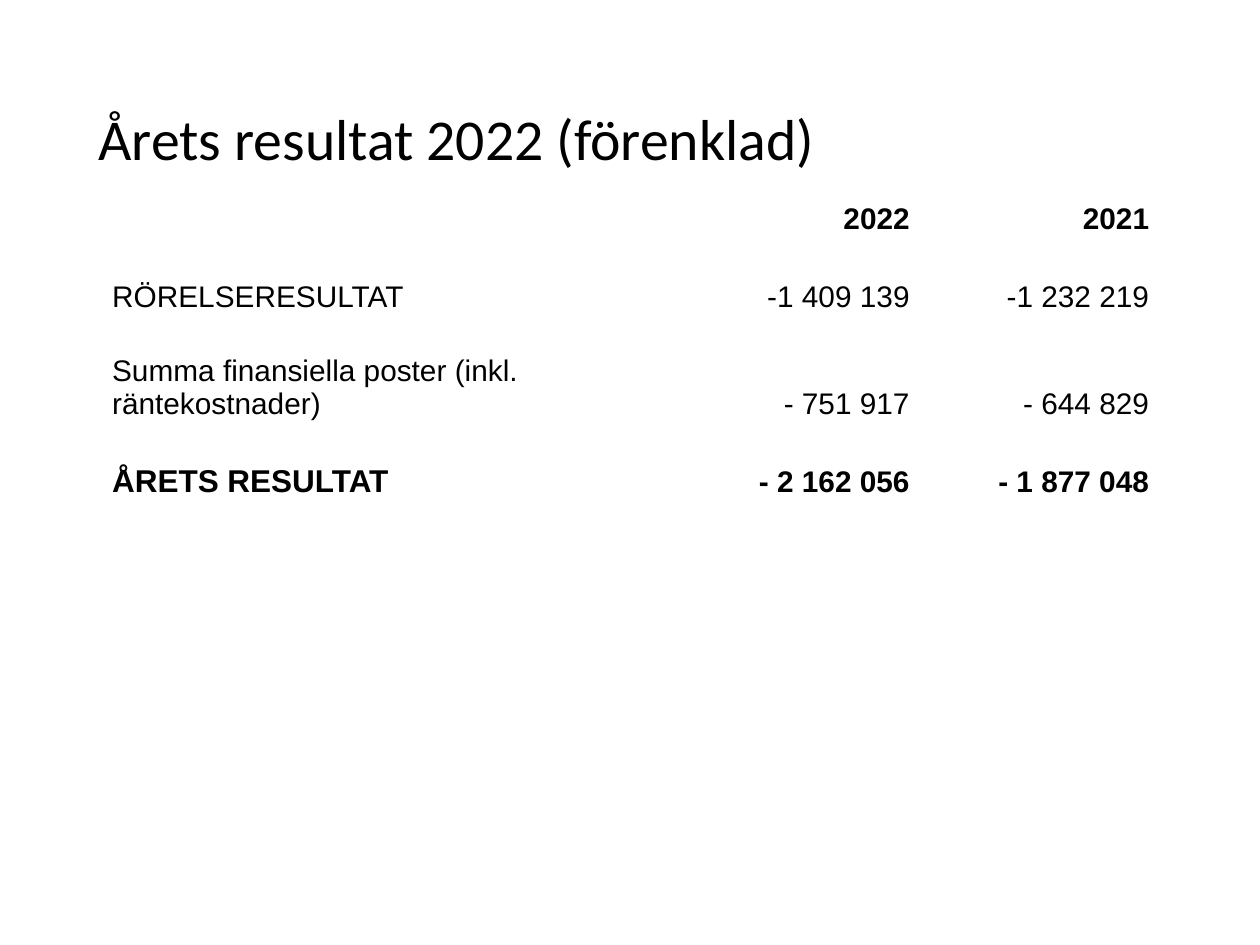
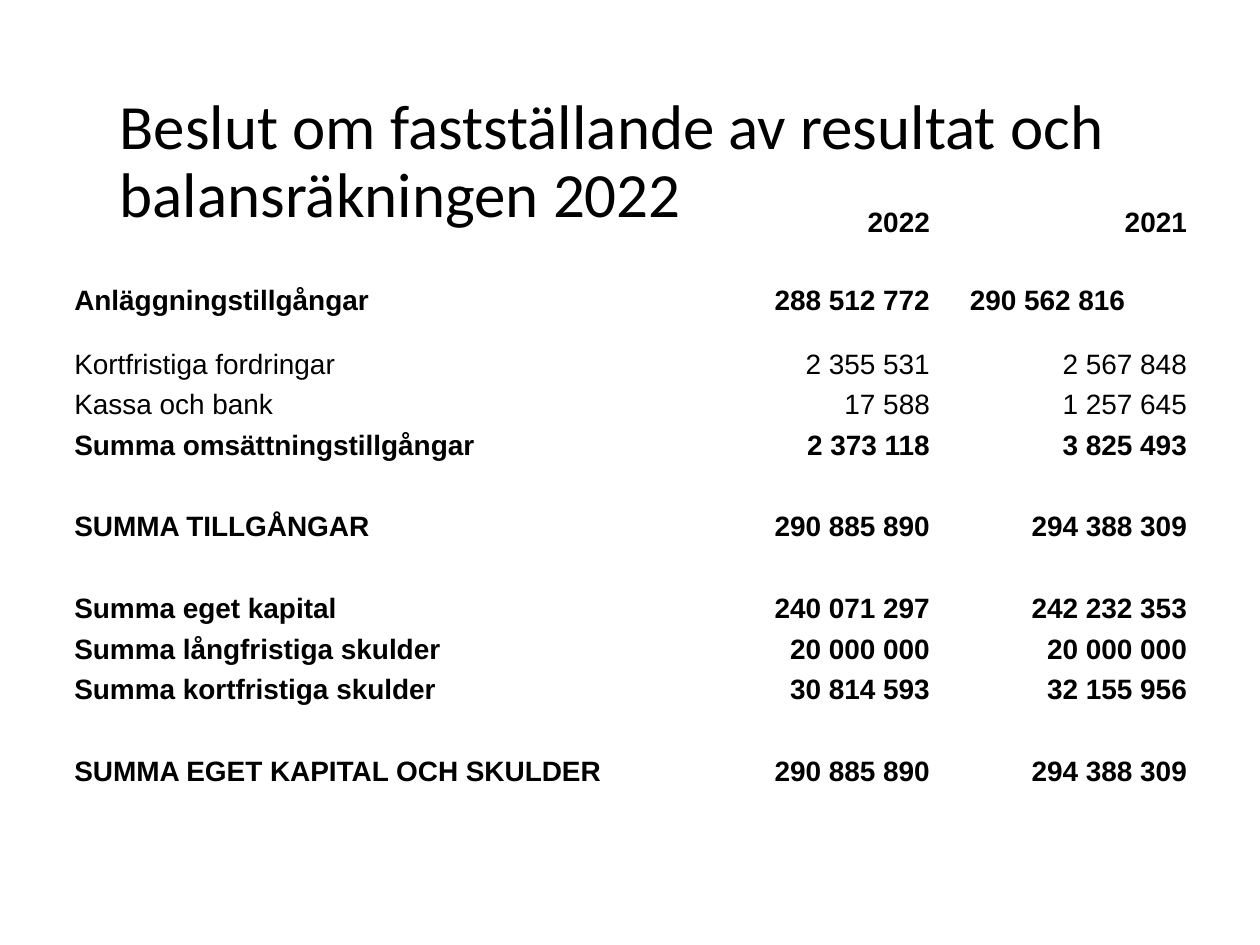
"""Build two slides with the simplified annual result and balance sheet for 2022."""
import lxml.etree
import pptx
import pptx.dml.color
import pptx.enum.text
import pptx.oxml.ns
import pptx.util

Inches = pptx.util.Inches
Align = pptx.enum.text.PP_ALIGN
Anchor = pptx.enum.text.MSO_ANCHOR
qn = pptx.oxml.ns.qn

BLACK = pptx.dml.color.RGBColor(0, 0, 0)
TITLE_FONT = "Calibri"
TABLE_FONT = "Arial"
CELL_INSET = 0.01
EMPTY_CELL_SIZE = 12
TITLE_ONLY_LAYOUT = 5

RESULT_ROWS = [
    ("", "2022", "2021"),
    (),
    ("RÖRELSERESULTAT", "-1 409 139", "-1 232 219"),
    (),
    ("Summa finansiella poster (inkl. räntekostnader)", "- 751 917", "- 644 829"),
    (),
    ("ÅRETS RESULTAT", "- 2 162 056", "- 1 877 048"),
    (),
    (),
]
BALANCE_ROWS = [
    ("", "2022", "2021"),
    (),
    ("Anläggningstillgångar", "288 512 772", "290 562 816"),
    ("Kortfristiga fordringar", "2 355 531", "2 567 848"),
    ("Kassa och bank", "17 588", "1 257 645"),
    ("Summa omsättningstillgångar", "2 373 118", "3 825 493"),
    (),
    ("SUMMA TILLGÅNGAR", "290 885 890", "294 388 309"),
    (),
    ("Summa eget kapital", "240 071 297", "242 232 353"),
    ("Summa långfristiga skulder", "20 000 000", "20 000 000"),
    ("Summa kortfristiga skulder", "30 814 593", "32 155 956"),
    (),
    ("SUMMA EGET KAPITAL OCH SKULDER", "290 885 890", "294 388 309"),
]


def write_text(frame, text, font=TABLE_FONT, size=16, bold=False,
               align=Align.LEFT, line_spacing=None):
    para = frame.paragraphs[0]
    para.alignment = align
    para.line_spacing = line_spacing
    span = para.add_run()
    span.text = text
    span.font.name = font
    span.font.size = pptx.util.Pt(size)
    span.font.bold = bold
    span.font.color.rgb = BLACK


class ReportDeck:
    def __init__(self):
        self.deck = pptx.Presentation()
        self.deck.slide_width = Inches(10)
        self.deck.slide_height = Inches(7.5)
        self.page = None

    def add_page(self, title, left, top, size):
        layout = self.deck.slide_layouts[TITLE_ONLY_LAYOUT]
        self.page = self.deck.slides.add_slide(layout)
        box = self.page.shapes.title
        box.left, box.top = Inches(left), Inches(top)
        box.width, box.height = Inches(8.62), Inches(1.45)
        frame = box.text_frame
        frame.word_wrap = True
        frame.auto_size = pptx.enum.text.MSO_AUTO_SIZE.NONE
        frame.vertical_anchor = Anchor.MIDDLE
        write_text(frame, title, font=TITLE_FONT, size=size, line_spacing=0.9)

    def add_figures(self, rows, left, top, widths, heights, size, plain_rows,
                    larger_labels=()):
        box = self.page.shapes.add_table(
            len(rows), len(widths), Inches(left), Inches(top),
            Inches(sum(widths)), Inches(sum(heights)))
        box._element.addnext(self.page.shapes.title._element)
        table = box.table
        table.first_row = table.horz_banding = False
        for column, width in zip(table.columns, widths):
            column.width = Inches(width)
        for row_index, (values, height) in enumerate(zip(rows, heights)):
            table.rows[row_index].height = Inches(height)
            for column_index in range(len(widths)):
                text = values[column_index] if values else ""
                is_label = column_index == 0
                self.fill_cell(
                    table.cell(row_index, column_index), text,
                    size=size + (text in larger_labels),
                    bold=row_index not in plain_rows,
                    align=Align.LEFT if is_label else Align.RIGHT)
        return table

    def fill_cell(self, cell, text, **text_format):
        cell.fill.background()
        cell.vertical_anchor = Anchor.BOTTOM
        cell.margin_left = cell.margin_right = cell.margin_top = Inches(CELL_INSET)
        cell.margin_bottom = 0
        self.clear_borders(cell)
        if text:
            write_text(cell.text_frame, text, **text_format)
        else:
            lxml.etree.SubElement(
                cell.text_frame.paragraphs[0]._p, qn("a:endParaRPr"),
                sz=str(EMPTY_CELL_SIZE * 100))

    def clear_borders(self, cell):
        properties = cell._tc.get_or_add_tcPr()
        for position, side in enumerate(("a:lnL", "a:lnR", "a:lnT", "a:lnB")):
            border = lxml.etree.Element(qn(side), w="0")
            lxml.etree.SubElement(border, qn("a:noFill"))
            properties.insert(position, border)


def main():
    report = ReportDeck()

    report.add_page("Årets resultat 2022 (förenklad)", 0.68, 0.4, size=33)
    report.add_figures(
        RESULT_ROWS, 0.88, 1.55, widths=[4.45, 1.9, 1.9],
        heights=[0.32] + [0.31] * 3 + [0.54] + [0.31] * 4,
        size=17, plain_rows=(2, 4), larger_labels=("ÅRETS RESULTAT",))

    report.add_page("Beslut om fastställande av resultat och balansräkningen 2022",
                    0.85, 0.57, size=36)
    balance = report.add_figures(
        BALANCE_ROWS, 0.58, 1.62, widths=[4.77, 2.04, 2.04],
        heights=[0.27, 0.32, 0.3, 0.51]
        + [0.32 if values else 0.33 for values in BALANCE_ROWS[4:]],
        size=16, plain_rows=(3, 4))
    balance.cell(2, 2).margin_right = Inches(0.5)

    report.deck.save("out.pptx")


if __name__ == "__main__":
    main()
